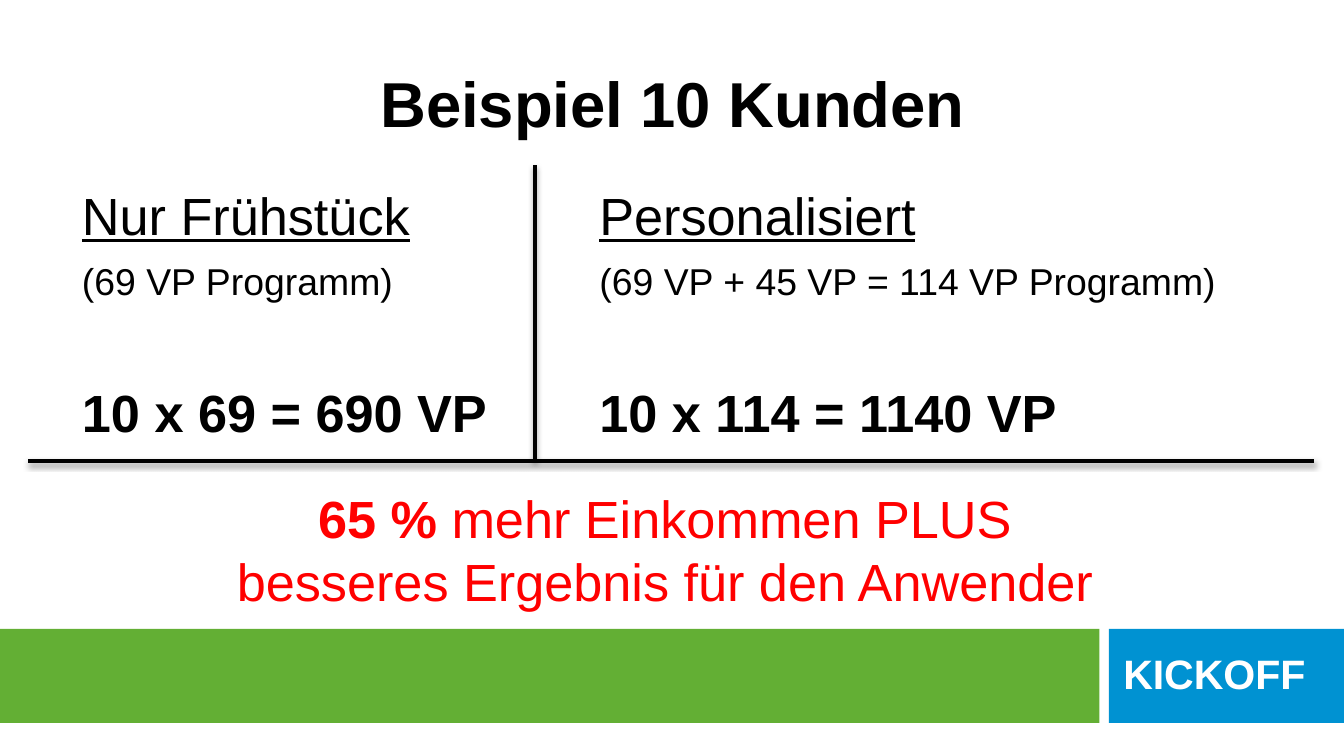
import dataclasses

import lxml.etree
import pptx
import pptx.dml.color
import pptx.enum.shapes
import pptx.enum.text
import pptx.oxml.ns
import pptx.util

Inches = pptx.util.Inches
Pt = pptx.util.Pt
qn = pptx.oxml.ns.qn
TEXT = pptx.enum.text

BLACK, WHITE, RED = "000000", "FFFFFF", "FF0000"
GREEN, BLUE = "63AF34", "0092D2"
WIDTH = 10


@dataclasses.dataclass
class Box:
    left: float
    top: float
    width: float
    height: float


@dataclasses.dataclass
class Plan:
    box: Box
    name: str
    program: str
    total: str


@dataclasses.dataclass
class Bar:
    box: Box
    color: str


@dataclasses.dataclass
class Rule:
    x1: float
    y1: float
    x2: float
    y2: float


PLANS = [
    Plan(Box(0.51, 1.31, 3.3, 3.42), "Nur Frühstück",
         "(69 VP Programm)", "10 x 69 = 690 VP"),
    Plan(Box(4.36, 1.31, 4.96, 3.42), "Personalisiert",
         "(69 VP + 45 VP = 114 VP Programm)", "10 x 114 = 1140 VP"),
]
BARS = [Bar(Box(0, 4.68, 8.18, 0.7), GREEN),
        Bar(Box(8.25, 4.68, 1.75, 0.7), BLUE)]
RULES = [Rule(3.98, 1.23, 3.98, 3.43), Rule(0.21, 3.43, 9.78, 3.43)]


def rgb(code: str) -> pptx.dml.color.RGBColor:
    return pptx.dml.color.RGBColor.from_string(code)


def style(font, size: float, color: str, bold: bool = False) -> None:
    font.name = "Arial"
    font.size = Pt(size)
    font.bold = bold
    font.color.rgb = rgb(color)


def place(shape, box: Box) -> None:
    shape.left, shape.top = Inches(box.left), Inches(box.top)
    shape.width, shape.height = Inches(box.width), Inches(box.height)


def add_text(slide, box: Box):
    shape = slide.shapes.add_textbox(0, 0, 0, 0)
    place(shape, box)
    shape.text_frame.word_wrap = True
    return shape.text_frame.paragraphs[0]


def draw_bar(slide, bar: Bar) -> None:
    kind = pptx.enum.shapes.MSO_SHAPE.RECTANGLE
    shape = slide.shapes.add_shape(kind, 0, 0, 0, 0)
    place(shape, bar.box)
    shape.shadow.inherit = False
    shape.fill.solid()
    shape.fill.fore_color.rgb = rgb(bar.color)
    shape.line.fill.background()


def draw_plan(shape, plan: Plan) -> None:
    place(shape, plan.box)
    frame = shape.text_frame
    frame.auto_size = TEXT.MSO_AUTO_SIZE.NONE
    rows = [(plan.name, 28, 0), (plan.program, 20, 7), (plan.total, 28, 41)]
    frame.text = "\n".join(text for text, _, _ in rows)
    for para, (text, size, gap) in zip(frame.paragraphs, rows):
        para.space_before = Pt(gap)
        props = para._p.get_or_add_pPr()
        props.set("marL", "0")
        props.set("indent", "0")
        lxml.etree.SubElement(props, qn("a:buNone"))
        style(para.font, size, BLACK, text == plan.total)
        para.font.underline = text == plan.name


def draw_rule(slide, rule: Rule) -> None:
    line = slide.shapes.add_connector(
        pptx.enum.shapes.MSO_CONNECTOR.STRAIGHT,
        Inches(rule.x1), Inches(rule.y1), Inches(rule.x2), Inches(rule.y2))
    line.line.color.rgb = rgb(BLACK)
    line.line.width = Pt(2)
    # Soft shadow straight below
    group = lxml.etree.SubElement(line._element.spPr, qn("a:effectLst"))
    shade = lxml.etree.SubElement(
        group, qn("a:outerShdw"), blurRad=str(Pt(3.1)), dist=str(Pt(1.6)),
        dir=str(90 * 60000), rotWithShape="0")
    color = lxml.etree.SubElement(shade, qn("a:srgbClr"), val=BLACK)
    lxml.etree.SubElement(color, qn("a:alpha"), val="38000")


def main() -> None:
    # Widescreen, 16 to 9
    deck = pptx.Presentation()
    deck.slide_width = Inches(WIDTH)
    deck.slide_height = Inches(WIDTH * 9 / 16)
    slide = deck.slides.add_slide(deck.slide_layouts[3])

    # Footer band
    for bar in BARS:
        draw_bar(slide, bar)
    label = add_text(slide, Box(8.26, 4.85, 1.74, 0.4))
    label.text = "KICKOFF"
    label.line_spacing = 0.8
    style(label.font, 22, WHITE, True)

    # Title
    title = slide.shapes.title
    place(title, Box(0.92, 0.29, 8.17, 0.94))
    title.text_frame.text = "Beispiel 10 Kunden"
    title.text_frame.vertical_anchor = TEXT.MSO_ANCHOR.MIDDLE
    head = title.text_frame.paragraphs[0]
    head.alignment = TEXT.PP_ALIGN.CENTER
    style(head.font, 34, BLACK, True)

    # Two plans side by side
    for spot, plan in enumerate(PLANS, 1):
        draw_plan(slide.placeholders[spot], plan)

    # Result
    result = add_text(slide, Box(0, 3.57, WIDTH, 1.04))
    result.alignment = TEXT.PP_ALIGN.CENTER
    style(result.font, 28, RED)
    share = result.add_run()
    share.text = "65 % "
    share.font.bold = True
    result.add_run().text = "mehr Einkommen PLUS "
    result.add_line_break()
    result.add_run().text = "besseres Ergebnis für den Anwender "

    # Dividing lines
    for rule in RULES:
        draw_rule(slide, rule)

    deck.save("out.pptx")


if __name__ == "__main__":
    main()
